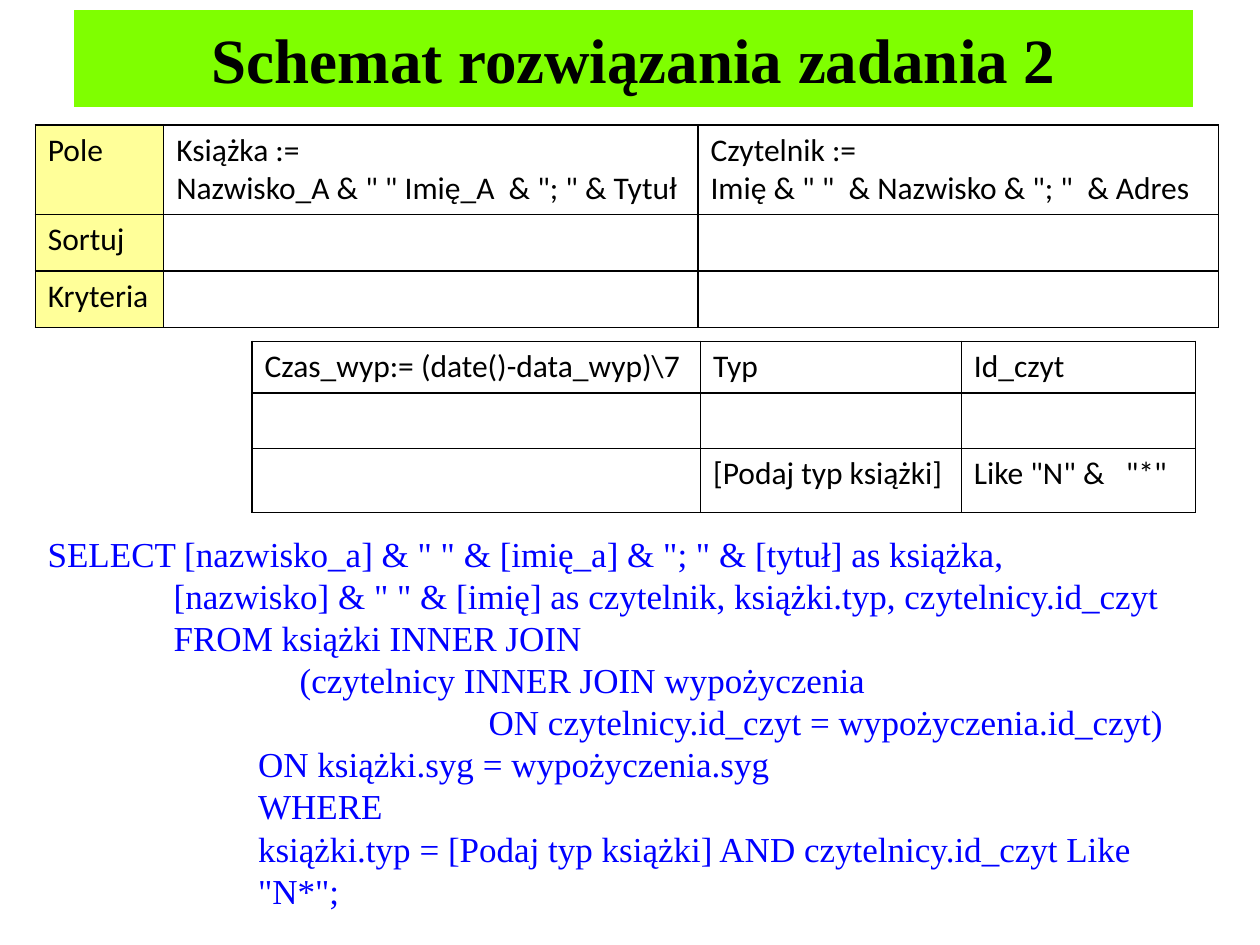
from lxml import etree
from pptx import Presentation, util as u
from pptx.dml import color
from pptx.enum import text
from pptx.oxml import ns

WIDTH, HEIGHT = u.Inches(10), u.Inches(7.5)
SERIF, SANS = "Times New Roman", "Calibri"

# Boxes: left, top, width, height in inches
TITLE_BOX = (0.56, 0.05, 8.94, 0.83)
FIELDS_BOX = (0.28, 0.99, 9.39, 1.6)
CRITERIA_BOX = (2, 2.71, 7.5, 1.36)
QUERY_BOX = (0.28, 4.18, 9.06, 2.79)

FIELDS = [
    ["Pole",
     'Książka :=\nNazwisko_A & " " Imię_A  & "; " & Tytuł',
     'Czytelnik :=\nImię & " "  & Nazwisko & "; "  & Adres'],
    ["Sortuj", "", ""],
    ["Kryteria", "", ""],
]
CRITERIA = [
    ["Czas_wyp:= (date()-data_wyp)\\7", "Typ", "Id_czyt"],
    ["", "", ""],
    ["", "[Podaj typ książki]", 'Like "N" &   "*"'],
]
# Query lines: indent in inches, wording
QUERY = [
    (0, 'SELECT [nazwisko_a] & " " & [imię_a] & "; " & [tytuł] as książka,'),
    (1, '[nazwisko] & " " & [imię] as czytelnik, książki.typ, czytelnicy.id_czyt'),
    (1, "FROM książki INNER JOIN"),
    (2, "(czytelnicy INNER JOIN wypożyczenia"),
    (3.5, "ON czytelnicy.id_czyt = wypożyczenia.id_czyt)"),
    (1.67, "ON książki.syg = wypożyczenia.syg"),
    (1.67, "WHERE"),
    (1.67, 'książki.typ = [Podaj typ książki] AND czytelnicy.id_czyt Like "N*";'),
]


def rgb(value):
    return color.RGBColor.from_string(value)


def inches(box):
    return [u.Inches(length) for length in box]


def style(para, name, size, tint, bold=False):
    font = para.font
    font.name, font.size, font.bold = name, u.Pt(size), bold
    font.color.rgb = rgb(tint)


def add_borders(cell, tint="000000", width=1):
    properties = cell._tc.get_or_add_tcPr()
    for side in ("lnL", "lnR", "lnT", "lnB"):
        line = etree.SubElement(properties, ns.qn(f"a:{side}"), w=str(u.Pt(width)))
        fill = etree.SubElement(line, ns.qn("a:solidFill"))
        etree.SubElement(fill, ns.qn("a:srgbClr"), val=tint)


def place_title(page, box, wording):
    title = page.shapes.title
    title.left, title.top, title.width, title.height = inches(box)
    title.fill.solid()
    title.fill.fore_color.rgb = rgb("7FFF00")
    title.line.color.rgb = rgb("FFFFFF")
    title.line.width = u.Pt(4)
    frame = title.text_frame
    frame.text = wording
    frame.vertical_anchor = text.MSO_ANCHOR.MIDDLE
    para = frame.paragraphs[0]
    para.alignment = text.PP_ALIGN.CENTER
    style(para, SERIF, 36, "000000", bold=True)


def place_grid(page, box, cells, widths, heights, label_fill=None):
    table = page.shapes.add_table(len(heights), len(widths), *inches(box)).table
    table.first_row = table.horz_banding = False
    for column, width in zip(table.columns, widths):
        column.width = u.Inches(width)
    for row, height, wordings in zip(table.rows, heights, cells):
        row.height = u.Inches(height)
        for index, (cell, wording) in enumerate(zip(row.cells, wordings)):
            cell.text = wording
            add_borders(cell)
            if label_fill and index == 0:
                cell.fill.solid()
                cell.fill.fore_color.rgb = rgb(label_fill)
            else:
                cell.fill.background()
            for para in cell.text_frame.paragraphs:
                style(para, SANS, 18, "000000")


def place_query(page, box, lines):
    frame = page.shapes.add_textbox(*inches(box)).text_frame
    frame.word_wrap = True
    frame.text = "\n".join(wording for _, wording in lines)
    for para, (indent, _) in zip(frame.paragraphs, lines):
        para._p.get_or_add_pPr().set("marL", str(u.Inches(indent)))
        style(para, SERIF, 20, "0000FF")


def main():
    deck = Presentation()
    deck.slide_width, deck.slide_height = WIDTH, HEIGHT
    page = deck.slides.add_slide(deck.slide_layouts.get_by_name("Title Only"))

    place_title(page, TITLE_BOX, "Schemat rozwiązania zadania 2")
    # Query design grid, split over two tables
    place_grid(page, FIELDS_BOX, FIELDS, (1.02, 4.24, 4.13), (0.59, 0.45, 0.45), "FFFF99")
    place_grid(page, CRITERIA_BOX, CRITERIA, (3.56, 2.07, 1.86), (0.41, 0.44, 0.51))
    # The same query in SQL
    place_query(page, QUERY_BOX, QUERY)

    deck.save("out.pptx")


if __name__ == "__main__":
    main()
